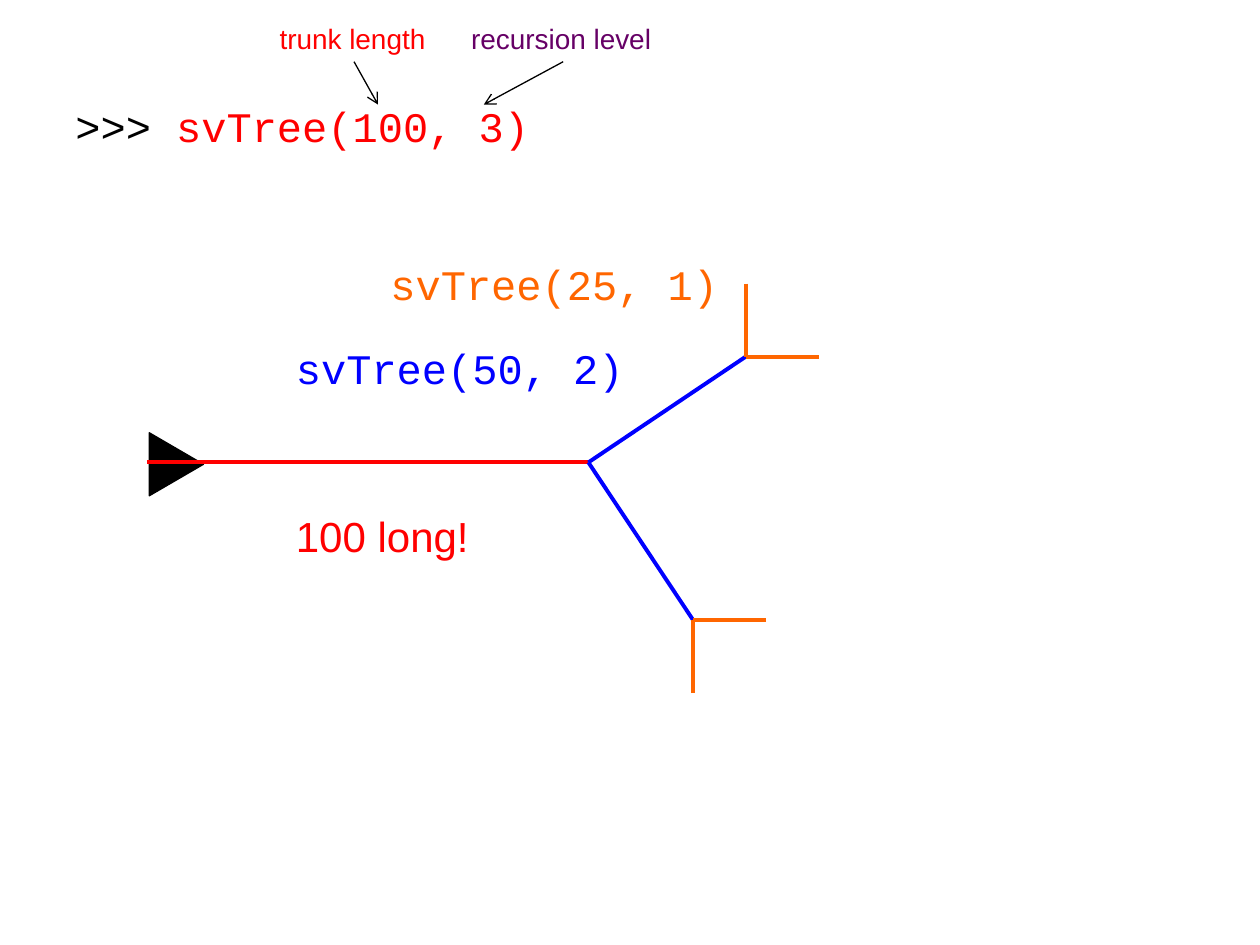
"""Build a slide that traces the calls of a recursive tree function."""
import lxml.etree
import pptx
import pptx.dml.color
import pptx.enum.shapes
import pptx.enum.text
import pptx.oxml.ns
import pptx.util

Inches = pptx.util.Inches
Pt = pptx.util.Pt
RGBColor = pptx.dml.color.RGBColor
qn = pptx.oxml.ns.qn

BLACK = RGBColor(0x00, 0x00, 0x00)
RED = RGBColor(0xFF, 0x00, 0x00)
BLUE = RGBColor(0x00, 0x00, 0xFF)
ORANGE = RGBColor(0xFF, 0x66, 0x00)
PURPLE = RGBColor(0x66, 0x00, 0x66)
SANS = "Arial"
MONO = "Courier New"
FORK = (4.67, 3.67)


def add_label(slide, box, runs, font=MONO, size=24):
    """Add a one-line label made of (text, colour) runs."""
    label = slide.shapes.add_textbox(*map(Inches, box))
    frame = label.text_frame
    frame.word_wrap = False
    frame.auto_size = pptx.enum.text.MSO_AUTO_SIZE.SHAPE_TO_FIT_TEXT
    for text, color in runs:
        run = frame.paragraphs[0].add_run()
        run.text = text
        run.font.name = font
        run.font.size = Pt(size)
        run.font.color.rgb = color


def add_line(shapes, start, end, color, width=2.25, arrow=False):
    """Add a straight line, with an open arrowhead at its end if asked."""
    kind = pptx.enum.shapes.MSO_CONNECTOR.STRAIGHT
    line = shapes.add_connector(kind, *map(Inches, start + end))
    line.line.color.rgb = color
    line.line.width = Pt(width)
    props = line.element.spPr
    if arrow:
        lxml.etree.SubElement(props.find(qn("a:ln")), qn("a:tailEnd"), type="arrow")
    lxml.etree.SubElement(props, qn("a:effectLst"))


def add_turtle(slide, box):
    """Add the black turtle that points to the right."""
    kind = pptx.enum.shapes.MSO_SHAPE.ISOSCELES_TRIANGLE
    turtle = slide.shapes.add_shape(kind, *map(Inches, box))
    turtle.rotation = 90
    turtle.shadow.inherit = False
    turtle.fill.solid()
    turtle.fill.fore_color.rgb = BLACK
    turtle.line.color.rgb = BLACK
    turtle.line.width = Pt(0.75)


def add_branch(slide, joint, rise):
    """Add a group with a blue branch and its two orange twigs."""
    shapes = slide.shapes.add_group_shape().shapes
    x, y = joint
    add_line(shapes, FORK, joint, BLUE)
    for tip in ((x, y + rise), (x + 0.58, y)):
        add_line(shapes, tip, joint, ORANGE)


def main():
    """Build and save the slide."""
    deck = pptx.Presentation()
    deck.slide_width = Inches(10)
    deck.slide_height = Inches(7.5)
    slide = deck.slides.add_slide(deck.slide_layouts[6])

    add_label(slide, (0.5, 0.75, 3.83, 0.51), [(">>> ", BLACK), ("svTree(100, 3)", RED)])
    add_label(slide, (3.64, 0.12, 1.65, 0.37), [("recursion level", PURPLE)], SANS, 16)
    add_label(slide, (2.12, 0.12, 1.38, 0.37), [("trunk length", RED)], SANS, 16)
    for start, end in (((4.47, 0.49), (3.84, 0.83)), ((2.81, 0.49), (3, 0.83))):
        add_line(slide.shapes, start, end, BLACK, 0.75, arrow=True)

    add_turtle(slide, (1.15, 3.47, 0.5, 0.43))
    add_line(slide.shapes, (1.17, 3.67), FORK, RED)
    add_label(slide, (2.25, 4, 1.59, 0.51), [("100 long!", RED)], SANS)
    add_label(slide, (2.25, 2.67, 2.82, 0.51), [("svTree(50, 2)", BLUE)])
    add_label(slide, (3, 2, 2.82, 0.51), [("svTree(25, 1)", ORANGE)])

    add_branch(slide, (5.92, 2.83), -0.58)
    add_branch(slide, (5.5, 4.92), 0.58)
    deck.save("out.pptx")


if __name__ == "__main__":
    main()
